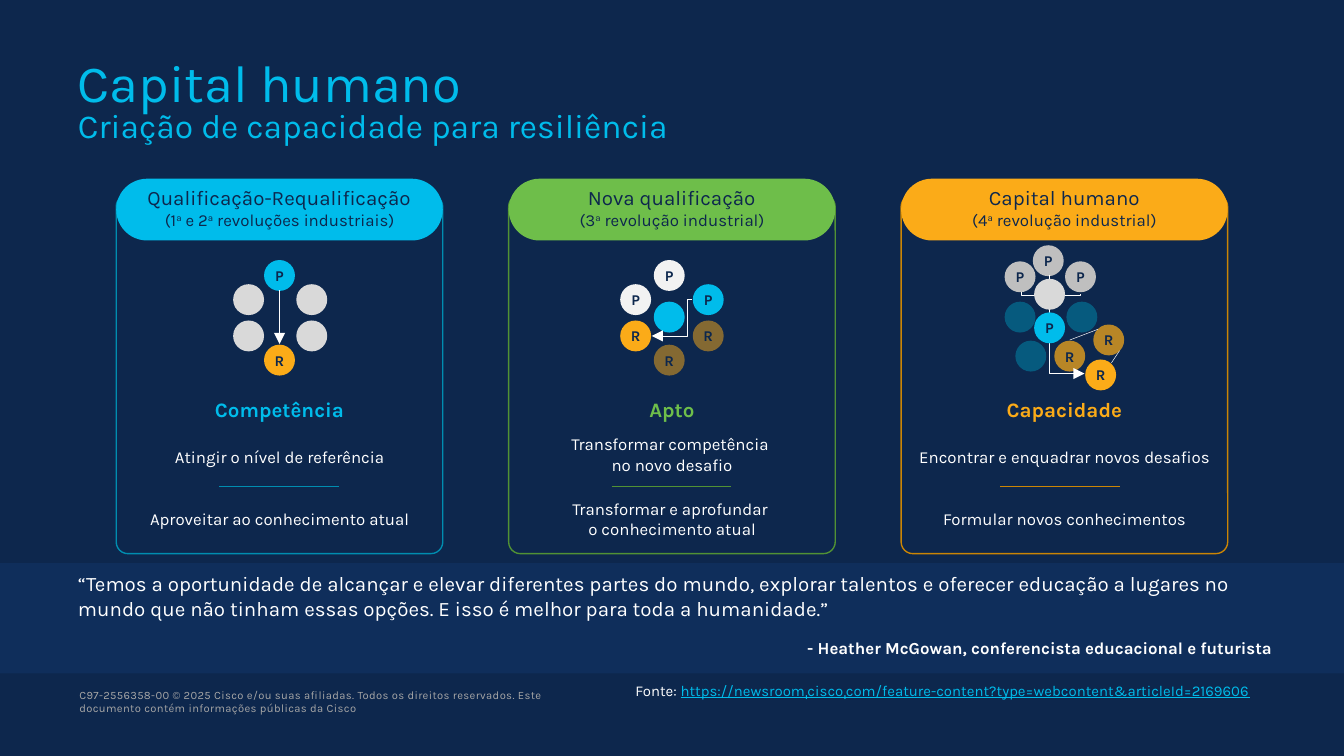
import itertools
from dataclasses import dataclass

import pptx
import pptx.util
import pptx.dml.color
import pptx.enum.shapes
import pptx.enum.text
import pptx.oxml
import pptx.oxml.ns

Inches, Pt = pptx.util.Inches, pptx.util.Pt
SHAPE = pptx.enum.shapes.MSO_SHAPE
CONNECTOR = pptx.enum.shapes.MSO_CONNECTOR
ALIGN = pptx.enum.text.PP_ALIGN
ANCHOR = pptx.enum.text.MSO_ANCHOR
qn = pptx.oxml.ns.qn


@dataclass(frozen=True)
class Theme:
    font: str = "Karla"
    navy: str = "0D274D"
    band: str = "133971"
    white: str = "FFFFFF"
    pale: str = "F2F2F2"
    light: str = "D9D9D9"
    grey: str = "BFBFBF"
    muted: str = "A6A6A6"
    blue: str = "00BCEB"
    dark_blue: str = "008DB0"
    green: str = "6EBE4A"
    dark_green: str = "519234"
    orange: str = "FBAB18"
    dark_orange: str = "CB8504"
    title: int = 28
    subtitle: int = 18
    heading: int = 11
    body: int = 9
    label: int = 8
    footer: int = 6
    hairline: float = 0.25
    outline: float = 0.75


T = Theme()
WIDTH = 10
HEIGHT = WIDTH * 9 / 16
PITCH, CARD_W = 2.92, 2.43
DOT = 0.23

# Dots: offset from the column centre, height on the slide, colour, opacity, letter
SKILL_DOTS = [
    (0, 2.05, T.blue, 100, "P"), (0.24, 2.23, T.light, 100, ""),
    (0.24, 2.5, T.light, 100, ""), (-0.23, 2.23, T.light, 100, ""),
    (-0.23, 2.5, T.light, 100, ""), (0, 2.68, T.orange, 100, "R"),
]
ABLE_DOTS = [
    (-0.27, 2.23, T.pale, 100, "P"), (-0.02, 2.05, T.pale, 100, "P"),
    (0.27, 2.23, T.blue, 100, "P"), (-0.27, 2.5, T.orange, 100, "R"),
    (0.27, 2.5, T.orange, 50, "R"), (-0.02, 2.68, T.orange, 50, "R"),
    (-0.02, 2.36, T.blue, 100, ""),
]
CAPACITY_DOTS = [
    (-0.12, 1.94, T.grey, 100, "P"), (-0.33, 2.06, T.grey, 100, "P"),
    (0.12, 2.06, T.grey, 100, "P"), (-0.33, 2.36, T.dark_blue, 50, ""),
    (-0.25, 2.65, T.dark_blue, 50, ""), (0.13, 2.36, T.dark_blue, 50, ""),
    (0.04, 2.65, T.orange, 72, "R"), (0.33, 2.53, T.orange, 72, "R"),
    (0.27, 2.79, T.orange, 100, "R"),
]
CAPACITY_FRONT_DOTS = [(-0.11, 2.19, T.light, 100, ""), (-0.11, 2.44, T.blue, 100, "P")]

# Cards: heading, era, colour, edge colour, result, two aims, shift of the divider
CARDS = [
    ("Qualificação-Requalificação", "(1ª e 2ª revoluções industriais)", T.blue, T.dark_blue,
     "Competência", "Atingir o nível de referência", "Aproveitar ao conhecimento atual", 0),
    ("Nova qualificação", "(3ª revolução industrial)", T.green, T.dark_green,
     "Apto", "Transformar competência \nno novo desafio",
     "Transformar e aprofundar \no conhecimento atual", 0),
    ("Capital humano", "(4ª revolução industrial)", T.orange, T.dark_orange,
     "Capacidade", "Encontrar e enquadrar novos desafios", "Formular novos conhecimentos", -0.03),
]


def rgb(value):
    return pptx.dml.color.RGBColor.from_string(value)


def add_run(p, text, size, color, bold=False):
    r = p.add_run()
    r.text = text
    r.font.name, r.font.size, r.font.bold = T.font, Pt(size), bold
    r.font.color.rgb = rgb(color)
    return r


def add_lines(p, text, size, color, bold=False):
    for i, line in enumerate(text.split("\n")):
        if i:
            p.add_line_break()
        add_run(p, line, size, color, bold)


def add_text_box(s, x, y, w, h, anchor=ANCHOR.TOP, inset=(0, 0)):
    tf = s.shapes.add_textbox(*map(Inches, (x, y, w, h))).text_frame
    tf.word_wrap, tf.vertical_anchor = True, anchor
    tf.margin_left = tf.margin_right = Inches(inset[0])
    tf.margin_top = tf.margin_bottom = Inches(inset[1])
    return tf


def add_label(s, cx, y, w, h, text, size, color, bold=False, anchor=ANCHOR.MIDDLE):
    p = add_text_box(s, cx - w / 2, y, w, h, anchor).paragraphs[0]
    p.alignment = ALIGN.CENTER
    add_lines(p, text, size, color, bold)


def add_panel(shapes, kind, x, y, w, h, fill=None, opacity=100, line=None, corner=None):
    sp = shapes.add_shape(kind, *map(Inches, (x, y, w, h)))
    sp.shadow.inherit = False
    if corner is not None:
        sp.adjustments[0] = corner
    if fill:
        sp.fill.solid()
        sp.fill.fore_color.rgb = rgb(fill)
        if opacity < 100:
            color = sp.fill._xPr.find(".//" + qn("a:srgbClr"))
            color.append(color.makeelement(qn("a:alpha"), {"val": str(opacity * 1000)}))
    else:
        sp.fill.background()
    if line:
        sp.line.color.rgb, sp.line.width = rgb(line), Pt(T.outline)
    else:
        sp.line.fill.background()
    return sp


def add_dots(shapes, cx, dots):
    for dx, y, color, opacity, letter in dots:
        sp = add_panel(shapes, SHAPE.OVAL, cx + dx - DOT / 2, y - DOT / 2, DOT, DOT, color, opacity)
        if letter:
            tf = sp.text_frame
            tf.margin_left = tf.margin_right = tf.margin_top = tf.margin_bottom = 0
            tf.vertical_anchor = ANCHOR.MIDDLE
            tf.paragraphs[0].alignment = ALIGN.CENTER
            add_run(tf.paragraphs[0], letter, T.label, T.navy, True)


def add_line(shapes, start, end, color=T.white, arrow=False, kind=CONNECTOR.STRAIGHT):
    c = shapes.add_connector(kind, *map(Inches, (*start, *end)))
    c.line.color.rgb, c.line.width = rgb(color), Pt(T.hairline)
    if arrow:
        ln = c.line._get_or_add_ln()
        ln.append(ln.makeelement(qn("a:tailEnd"), {"type": "triangle"}))
    sp_pr = c._element.spPr
    sp_pr.append(sp_pr.makeelement(qn("a:effectLst"), {}))
    return c


def add_elbow(shapes, start, end, bend=None, downward=False, arrow=False):
    """Bend at a share of the run; with no bend, turn once. Downward leaves vertically."""
    if downward:
        mx, my = (start[0] + end[0]) / 2, (start[1] + end[1]) / 2
        dx, dy = (end[0] - start[0]) / 2, (end[1] - start[1]) / 2
        start, end = (mx - dy, my - dx), (mx + dy, my + dx)
    c = add_line(shapes, start, end, arrow=arrow, kind=CONNECTOR.ELBOW)
    if downward:
        xfrm = c._element.spPr.find(qn("a:xfrm"))
        xfrm.set("rot", "16200000")
        xfrm.set("flipH", "1")
    geom = c._element.spPr.find(qn("a:prstGeom"))
    if bend is None:
        geom.set("prst", "bentConnector2")
    else:
        guide = {"name": "adj1", "fmla": f"val {round(bend * 100000)}"}
        geom.get_or_add_avLst().append(geom.makeelement(qn("a:gd"), guide))


def add_card(s, cx, heading, era, color, edge, result, first, second, shift):
    left = cx - CARD_W / 2
    add_panel(s.shapes, SHAPE.ROUNDED_RECTANGLE, left, 1.45, CARD_W, 2.67, line=edge, corner=0.036)
    add_panel(s.shapes, SHAPE.ROUNDED_RECTANGLE, left, 1.33, CARD_W, 0.46, color, corner=0.5)
    tf = add_text_box(s, cx - 1, 1.38, 2, 0.34)
    add_run(tf.paragraphs[0], heading, T.heading, T.navy)
    p = tf.add_paragraph()
    for raised, part in itertools.groupby(era, lambda ch: ch == "ª"):
        r = add_run(p, "".join(part), T.body, T.navy)
        if raised:
            r.font._element.set("baseline", "30000")
    for p in tf.paragraphs:
        p.alignment = ALIGN.CENTER
    add_label(s, cx, 2.95, 1.07, 0.19, result, T.heading, color, True)
    anchor = ANCHOR.TOP if "\n" in first else ANCHOR.MIDDLE
    add_label(s, cx, 3.23, CARD_W, 0.34, first, T.body, T.white, anchor=anchor)
    add_line(s.shapes, (cx + shift - 0.45, 3.62), (cx + shift + 0.44, 3.62), edge)
    add_label(s, cx, 3.69, CARD_W, 0.34, second, T.body, T.white)


def add_diagrams(s, skill, able, capacity):
    shapes = s.shapes.add_group_shape().shapes
    add_dots(shapes, skill, SKILL_DOTS)
    add_line(shapes, (skill, 2.16), (skill, 2.56), arrow=True)

    shapes = s.shapes.add_group_shape().shapes
    add_dots(shapes, able, ABLE_DOTS)
    add_elbow(shapes, (able + 0.15, 2.23), (able - 0.15, 2.5), bend=0.12, arrow=True)

    shapes = s.shapes.add_group_shape().shapes
    add_dots(shapes, capacity, CAPACITY_DOTS)
    add_elbow(shapes, (capacity - 0.11, 2.05), (capacity + 0.15, 2.78), downward=True, arrow=True)
    add_elbow(shapes, (capacity - 0.32, 2.17), (capacity + 0.12, 2.19), bend=1.5, downward=True)
    add_line(shapes, (capacity + 0.04, 2.53), (capacity + 0.25, 2.45))
    add_line(shapes, (capacity + 0.35, 2.7), (capacity + 0.41, 2.61))
    add_dots(shapes, capacity, CAPACITY_FRONT_DOTS)


def add_title(s):
    sp = s.shapes.title
    sp.left, sp.top, sp.width, sp.height = map(Inches, (0.48, 0.37, 9.13, 0.8))
    tf = sp.text_frame
    tf.auto_size = pptx.enum.text.MSO_AUTO_SIZE.NONE
    tf.vertical_anchor = ANCHOR.MIDDLE
    p = tf.paragraphs[0]
    p.alignment, p.line_spacing = ALIGN.LEFT, 0.8
    add_run(p, "Capital humano", T.title, T.blue)
    p.add_line_break()
    add_run(p, "Criação de capacidade para resiliência", T.subtitle, T.blue)


def add_quote(s):
    add_panel(s.shapes, SHAPE.RECTANGLE, 0, 4.19, WIDTH, 0.82, T.band, 40)
    tf = add_text_box(s, 0.58, 4.25, 8.88, 0.66)
    p = tf.paragraphs[0]
    p.space_after = Pt(6)
    add_run(p, "“Temos a oportunidade de alcançar e elevar diferentes partes do mundo, explorar talentos "
               "e oferecer educação a lugares no mundo que não tinham essas opções. "
               "E isso é melhor para toda a humanidade.”", T.heading, T.white)
    p = tf.add_paragraph()
    p.alignment, p.space_before = ALIGN.RIGHT, Pt(3)
    add_run(p, "- Heather McGowan, conferencista educacional e futurista", T.body, T.white, True)


def add_footer(s):
    p = add_text_box(s, 0.52, 5.08, 3.62, 0.27, ANCHOR.BOTTOM, (0.07, 0.03)).paragraphs[0]
    r = add_run(p, "C97-2556358-00 © 2025 Cisco e/ou suas afiliadas. Todos os direitos reservados. "
                   "Este documento contém informações públicas da Cisco", T.footer, T.muted)
    r.font._element.set("spc", "20")
    p = add_text_box(s, 4.63, 5.02, 4.83, 0.23, inset=(0.1, 0.05)).paragraphs[0]
    add_run(p, "Fonte: ", T.label, T.white)
    r = add_run(p, "https://newsroomˌciscoˌcom/feature-content?type=webcontent&articleId=2169606",
                T.label, T.blue)
    r.font.underline = True


def main():
    prs = pptx.Presentation()
    prs.slide_width, prs.slide_height = Inches(WIDTH), Inches(HEIGHT)
    s = prs.slides.add_slide(prs.slide_layouts[5])
    s.background.fill.solid()
    s.background.fill.fore_color.rgb = rgb(T.navy)
    add_title(s)
    centres = [WIDTH / 2 + (i - 1) * PITCH for i in range(len(CARDS))]
    for cx, card in zip(centres, CARDS):
        add_card(s, cx, *card)
    add_diagrams(s, *centres)
    add_quote(s)
    add_footer(s)
    prs.save("out.pptx")


if __name__ == "__main__":
    main()
